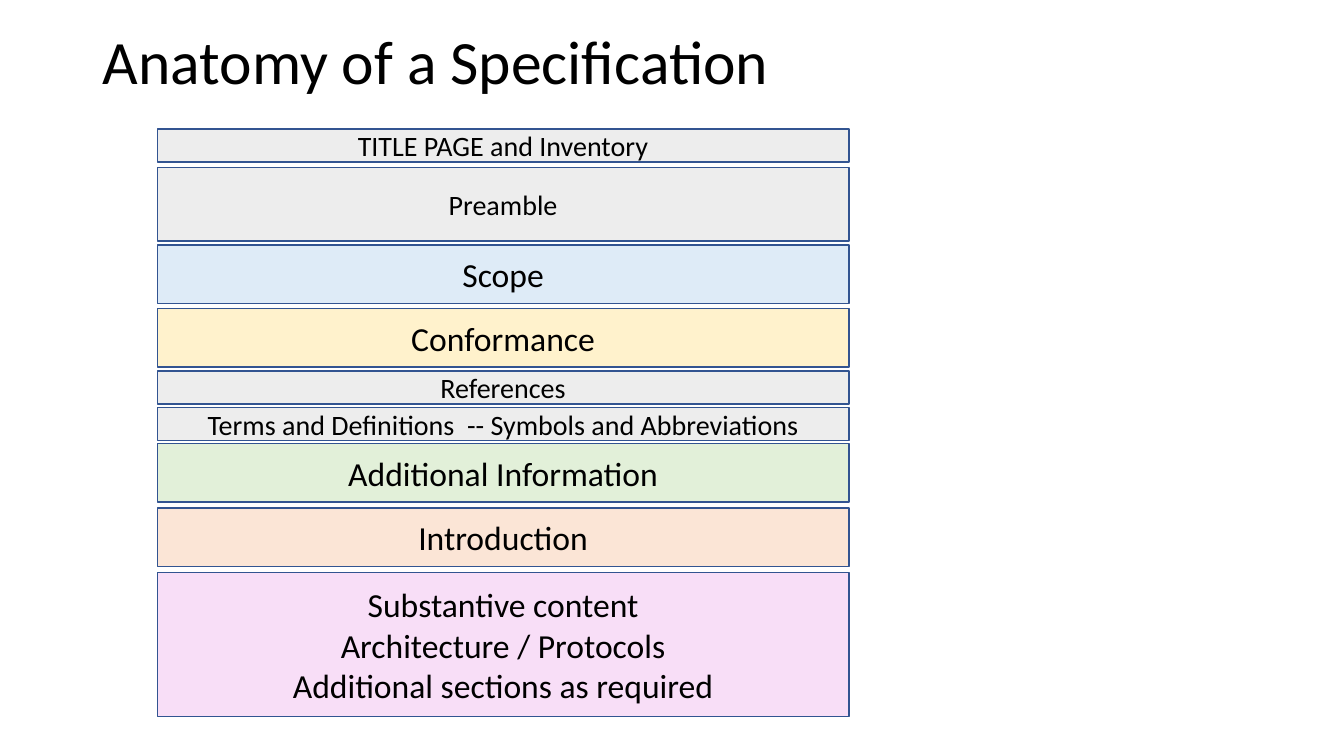
import pptx
import pptx.util
import pptx.dml.color
import pptx.enum.shapes
import pptx.enum.text

Inches = pptx.util.Inches
Pt = pptx.util.Pt

TITLE = "Anatomy of a Specification"
GREY = "EDEDED"
EDGE = "325491"
INK = "000000"
LEFT, WIDTH = 1.56, 6.86
LOW, MID = 0.33, 0.58

PARTS = [
    (1.28, LOW, GREY, 20, "TITLE PAGE and Inventory"),
    (1.66, 0.73, GREY, 20, "Preamble"),
    (2.43, MID, "DEEBF7", 24, "Scope"),
    (3.06, MID, "FFF2CC", 24, "Conformance"),
    (3.68, LOW, GREY, 20, "References"),
    (4.04, LOW, GREY, 20, "Terms and Definitions  -- Symbols and Abbreviations"),
    (4.40, MID, "E2F0D9", 24, "Additional Information"),
    (5.04, MID, "FBE5D6", 24, "Introduction"),
    (5.68, 1.43, "F8DEF7", 24,
     "Substantive content\nArchitecture / Protocols\nAdditional sections as required"),
]


def color(code):
    return pptx.dml.color.RGBColor.from_string(code)


def write(shape, text, size, align, space=1.0):
    frame = shape.text_frame
    frame.text = text
    frame.word_wrap = True
    frame.vertical_anchor = pptx.enum.text.MSO_ANCHOR.MIDDLE
    for para in frame.paragraphs:
        para.alignment = align
        para.line_spacing = space
        for run in para.runs:
            run.font.name = "Calibri"
            run.font.size = Pt(size)
            run.font.color.rgb = color(INK)


def add_part(slide, top, height, fill, size, text):
    box = slide.shapes.add_shape(
        pptx.enum.shapes.MSO_SHAPE.RECTANGLE,
        Inches(LEFT), Inches(top), Inches(WIDTH), Inches(height))
    box.shadow.inherit = False
    box.fill.solid()
    box.fill.fore_color.rgb = color(fill)
    box.line.color.rgb = color(EDGE)
    box.line.width = Pt(1)
    write(box, text, size, pptx.enum.text.PP_ALIGN.CENTER)


def main():
    deck = pptx.Presentation()
    deck.slide_width = Inches(13.33)
    deck.slide_height = Inches(7.5)
    slide = deck.slides.add_slide(deck.slide_layouts[6])
    head = slide.shapes.add_textbox(
        Inches(0.92), Inches(0), Inches(11.5), Inches(1.28))
    write(head, TITLE, 44, pptx.enum.text.PP_ALIGN.LEFT, 0.9)
    for part in PARTS:
        add_part(slide, *part)
    deck.save("out.pptx")


if __name__ == "__main__":
    main()
